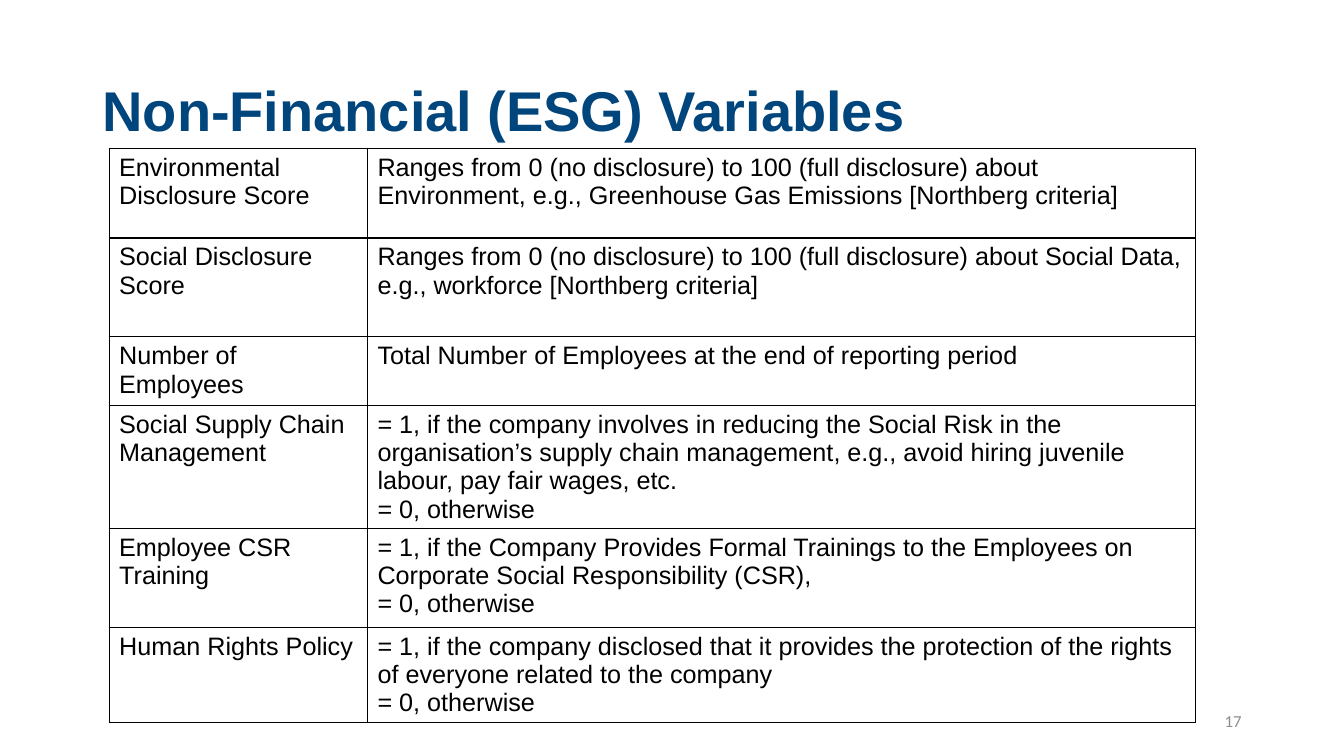
from lxml.etree import SubElement
from pptx import Presentation
from pptx.dml.color import RGBColor
from pptx.enum.text import MSO_ANCHOR, PP_ALIGN
from pptx.oxml.ns import qn
from pptx.util import Cm, Pt

COLORS = {"title": "00457C", "text": "000000", "line": "000000",
          "cell": "FFFFFF", "number": "8C8C8C"}
COLS = [6.51, 20.86]
HEIGHTS = [2.26, 2.49, 1.73, 2.95, 2.49, 2.26]
ROWS = [
    ("Environmental Disclosure Score",
     "Ranges from 0 (no disclosure) to 100 (full disclosure) about Environment, "
     "e.g., Greenhouse Gas Emissions [Northberg criteria]"),
    ("Social Disclosure Score",
     "Ranges from 0 (no disclosure) to 100 (full disclosure) about Social Data, "
     "e.g., workforce [Northberg criteria]"),
    ("Number of Employees",
     "Total Number of Employees at the end of reporting period"),
    ("Social Supply Chain Management",
     "= 1, if the company involves in reducing the Social Risk in the "
     "organisation’s supply chain management, e.g., avoid hiring juvenile "
     "labour, pay fair wages, etc.\n= 0, otherwise"),
    ("Employee CSR Training",
     "= 1, if the Company Provides Formal Trainings to the Employees on "
     "Corporate Social Responsibility (CSR),\n= 0, otherwise"),
    ("Human Rights Policy",
     "= 1, if the company disclosed that it provides the protection of the "
     "rights of everyone related to the company\n= 0, otherwise"),
]


def write(frame, text, size, color, face="Arial", bold=False, align=PP_ALIGN.LEFT):
    frame.text = text
    for par in frame.paragraphs:
        par.alignment = align
        for run in par.runs:
            run.font.name = face
            run.font.size = Pt(size)
            run.font.bold = bold
            run.font.color.rgb = RGBColor.from_string(COLORS[color])


def add_title(slide, text):
    title = slide.shapes.title
    title.left, title.top = Cm(2.33), Cm(1.01)
    title.width, title.height = Cm(29.21), Cm(3.68)
    frame = title.text_frame
    frame.word_wrap = True
    frame.vertical_anchor = MSO_ANCHOR.MIDDLE
    write(frame, text, 40, "title", bold=True)
    frame.paragraphs[0].line_spacing = 0.9


def set_borders(cell):
    props = cell._tc.get_or_add_tcPr()
    for side in ("a:lnL", "a:lnR", "a:lnT", "a:lnB"):
        line = SubElement(props, qn(side), w=str(Pt(1)))
        fill = SubElement(line, qn("a:solidFill"))
        SubElement(fill, qn("a:srgbClr"), val=COLORS["line"])


def add_grid(slide):
    grid = slide.shapes.add_table(len(ROWS), len(COLS), Cm(2.75), Cm(3.74),
                                  Cm(sum(COLS)), Cm(sum(HEIGHTS))).table
    grid.first_row = False
    grid.horz_banding = False
    for col, width in zip(grid.columns, COLS):
        col.width = Cm(width)
    for row, height, texts in zip(grid.rows, HEIGHTS, ROWS):
        row.height = Cm(height)
        for cell, text in zip(row.cells, texts):
            set_borders(cell)
            cell.fill.solid()
            cell.fill.fore_color.rgb = RGBColor.from_string(COLORS["cell"])
            write(cell.text_frame, text, 18, "text")


def add_number(slide, text):
    box = slide.shapes.add_textbox(Cm(23.92), Cm(17.65), Cm(7.62), Cm(1.01))
    frame = box.text_frame
    frame.word_wrap = True
    frame.vertical_anchor = MSO_ANCHOR.MIDDLE
    write(frame, text, 12, "number", face="Calibri", align=PP_ALIGN.RIGHT)


def main():
    deck = Presentation()
    deck.slide_width, deck.slide_height = Cm(33.87), Cm(19.05)
    slide = deck.slides.add_slide(deck.slide_layouts[5])
    add_title(slide, "Non-Financial (ESG) Variables")
    add_grid(slide)
    add_number(slide, "17")
    deck.save("out.pptx")


if __name__ == "__main__":
    main()
